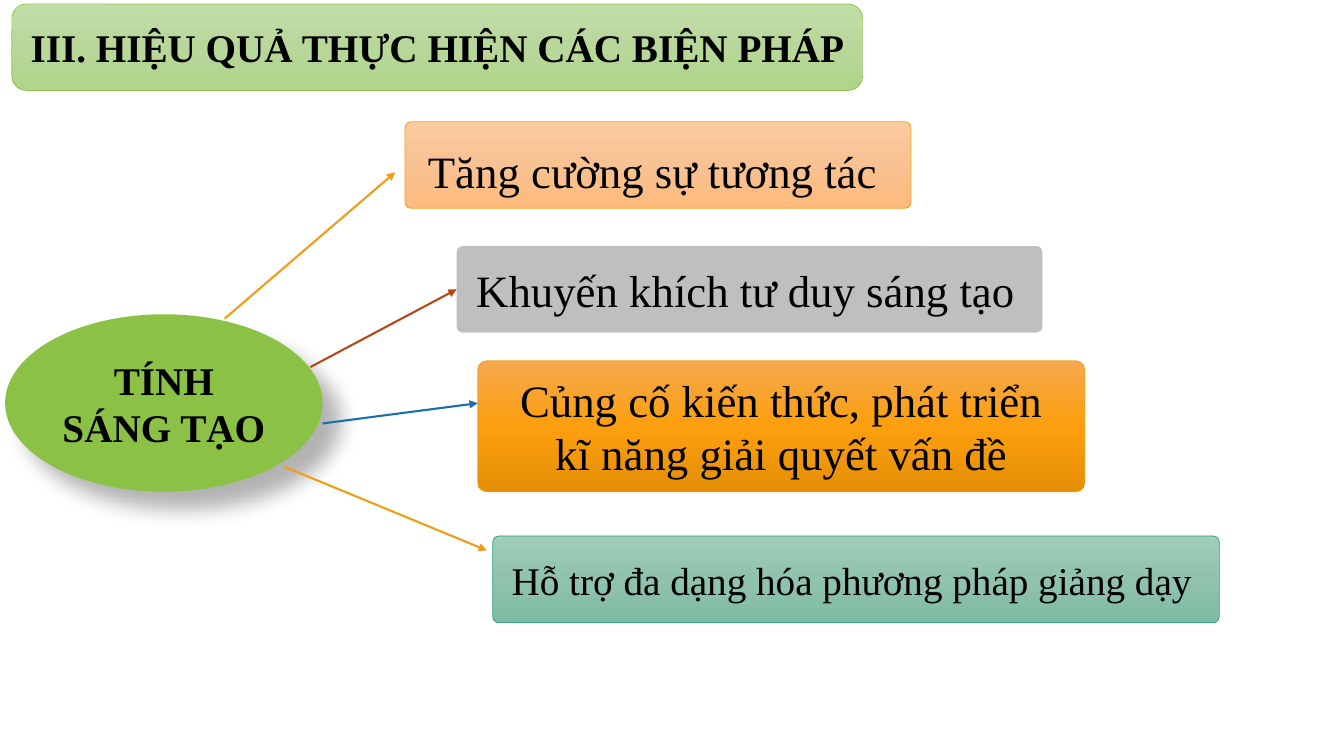
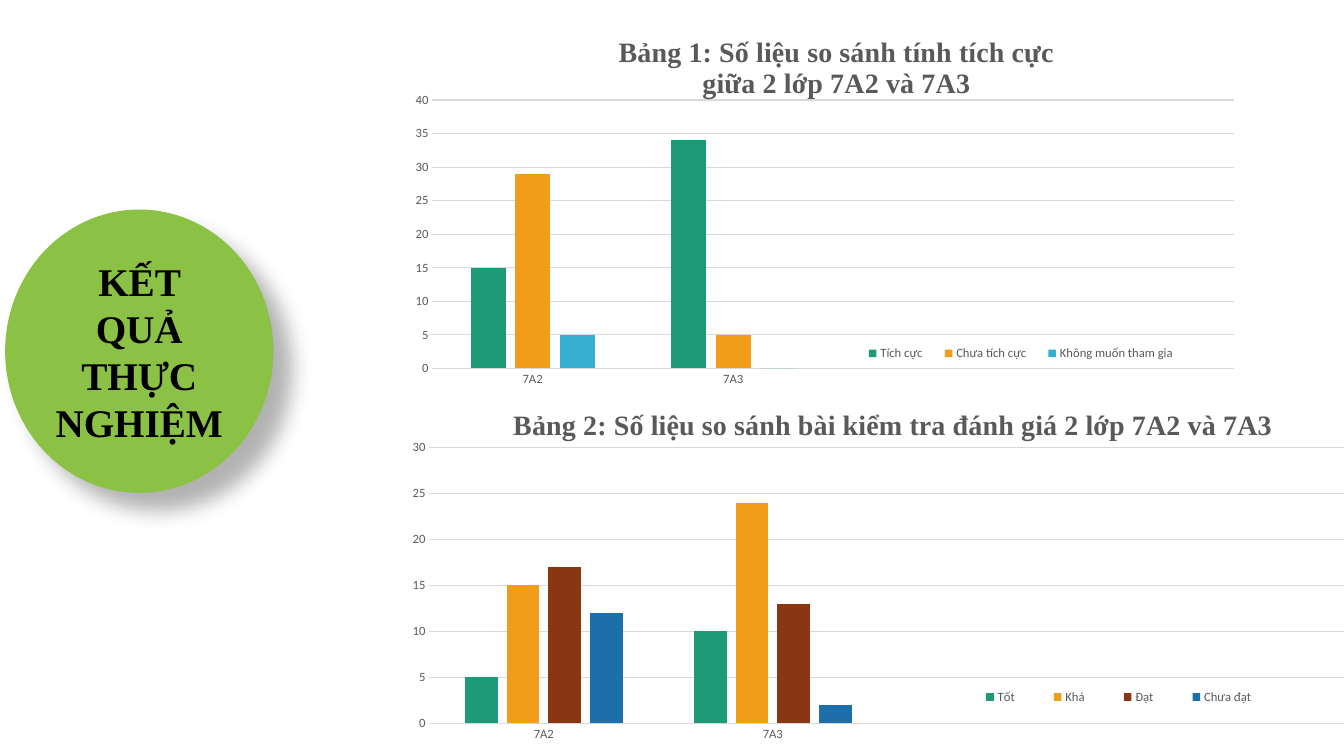
from copy import deepcopy

from pptx import Presentation
from pptx.chart.data import CategoryChartData
from pptx.dml.color import RGBColor
from pptx.enum.chart import XL_CHART_TYPE, XL_LEGEND_POSITION, XL_TICK_MARK
from pptx.enum.shapes import MSO_CONNECTOR, MSO_SHAPE
from pptx.enum.text import MSO_ANCHOR, PP_ALIGN
from pptx.oxml import parse_xml
from pptx.oxml.ns import nsdecls, qn
from pptx.util import Cm, Pt

HEADING_FONT = "Times New Roman"
CHART_FONT = "Calibri"

BLACK = RGBColor(0x00, 0x00, 0x00)
GRAY = RGBColor(0x59, 0x59, 0x59)
SILVER = RGBColor(0xBF, 0xBF, 0xBF)
GRID = RGBColor(0xD9, 0xD9, 0xD9)
GREEN = RGBColor(0x8B, 0xC1, 0x45)
TEAL = RGBColor(0x1D, 0x9A, 0x78)
ORANGE = RGBColor(0xF1, 0x9D, 0x19)
RUST = RGBColor(0xB7, 0x49, 0x19)
BROWN = RGBColor(0x89, 0x37, 0x13)
BLUE = RGBColor(0x1D, 0x6F, 0xA9)
SKY = RGBColor(0x36, 0xAF, 0xCE)


def shades(*codes):
    return [RGBColor.from_string(code) for code in codes]


GREEN_SHADES = shades("C2DEA8", "B8D79B", "AED588")
PEACH_SHADES = shades("FACBA0", "F8C292", "FCBA7D")
ORANGE_SHADES = shades("F5A84E", "FC9F0E", "E58F07")
TEAL_SHADES = shades("9ECDBA", "91C2AE", "7DBCA3")

# Boxes are left, top, width, height; insets are left, top, right, bottom; all in cm.
HEADER = ("III. HIỆU QUẢ THỰC HIỆN CÁC BIỆN PHÁP", (0.3, 0.1, 21.44, 2.18))
CREATIVITY = ("TÍNH SÁNG TẠO", (0.13, 7.92, 8, 4.47))
RESULTS = ("KẾT QUẢ THỰC NGHIỆM", (0.13, 5.28, 6.76, 7.14))

BENEFITS = [
    dict(text="Tăng cường sự tương tác", box=(10.21, 3.07, 12.75, 2.18),
         fill=PEACH_SHADES, line=ORANGE, insets=(0, 0.3, 0.28, 0),
         arrow=(ORANGE, (5.66, 8.03), (9.96, 4.34))),
    dict(text="Khuyến khích tư duy sáng tạo", box=(11.51, 6.2, 14.76, 2.18),
         fill=SILVER, insets=(0, 0, 0.2, 0),
         arrow=(RUST, (7.82, 9.25), None)),
    dict(text="Củng cố kiến thức, phát triển kĩ năng giải quyết vấn đề",
         box=(12.04, 9.09, 15.3, 3.3),
         fill=ORANGE_SHADES, line=ORANGE, insets=(0.94, 0, 0.94, 0),
         arrow=(BLUE, (8.13, 10.67), (12.04, 10.16))),
    dict(text="Hỗ trợ đa dạng hóa phương pháp giảng dạy",
         box=(12.42, 13.51, 18.31, 2.18),
         fill=TEAL_SHADES, line=TEAL, insets=(0.43, 0, 0, 0),
         size=28, align=PP_ALIGN.LEFT,
         arrow=(ORANGE, (7.16, 11.76), (12.27, 13.87))),
]

CLASSES = ["7A2", "7A3", "", ""]
# Layouts are fractions of the chart: x, y and, where sized, width, height.
CHARTS = [
    dict(title=["Bảng 1: Số liệu so sánh tính tích cực", "giữa 2 lớp 7A2 và 7A3"],
         box=(9.58, 0.71, 21.97, 9.53), top_value=40,
         series=[("Tích cực", (15, 34), TEAL),
                 ("Chưa tích cực", (29, 5), ORANGE),
                 ("Không muốn tham gia", (5, 0), SKY)],
         title_at=(0.27, 0.01), plot_at=(0.06, 0.19, 0.92, 0.71),
         legend_at=(0.54, 0.82, 0.39, 0.08)),
    dict(title=["Bảng 2: Số liệu so sánh bài kiểm tra đánh giá 2 lớp 7A2 và 7A3"],
         box=(9.58, 9.75, 24.82, 9.53), top_value=30,
         series=[("Tốt", (5, 10), TEAL),
                 ("Khá", (15, 24), ORANGE),
                 ("Đạt", (17, 13), BROWN),
                 ("Chưa đạt", (12, 2), BLUE)],
         title_at=(0.13, 0.04), plot_at=(0.05, 0.16, 0.93, 0.73),
         legend_at=(0.58, 0.78, 0.34, 0.08)),
]


def lengths(values):
    return [Cm(value) for value in values]


def style_font(font, name, size, color, bold=False):
    font.name, font.size, font.bold = name, Pt(size), bold
    font.color.rgb = color


def write(frame, text, size=28, bold=False, align=PP_ALIGN.CENTER,
          insets=(0.25, 0.13, 0.25, 0.13)):
    frame.word_wrap = True
    frame.vertical_anchor = MSO_ANCHOR.MIDDLE
    (frame.margin_left, frame.margin_top,
     frame.margin_right, frame.margin_bottom) = lengths(insets)
    paragraph = frame.paragraphs[0]
    paragraph.alignment = align
    run = paragraph.add_run()
    run.text = text
    style_font(run.font, HEADING_FONT, size, BLACK, bold)


def paint(shape, fill, line=None):
    """Fill with one colour, or with a list of three as a downward gradient."""
    shape.shadow.inherit = False
    if isinstance(fill, list):
        shape.fill.gradient()
        shape.fill.gradient_angle = 270
        stop_list = shape._element.spPr.find(".//" + qn("a:gsLst"))
        stop_list.append(deepcopy(stop_list[0]))
        for index, (stop, color) in enumerate(zip(shape.fill.gradient_stops, fill)):
            stop.color.rgb = color
            stop.position = index / 2
    else:
        shape.fill.solid()
        shape.fill.fore_color.rgb = fill
    if line is None:
        shape.line.fill.background()
    else:
        shape.line.color.rgb = line
        shape.line.width = Pt(0.5)


def add_panel(slide, text, box, fill, line=None, corner=0.07, **text_format):
    panel = slide.shapes.add_shape(MSO_SHAPE.ROUNDED_RECTANGLE, *lengths(box))
    panel.adjustments[0] = corner
    paint(panel, fill, line)
    write(panel.text_frame, text, **text_format)
    return panel


def add_topic(slide, text, box):
    """Add the green ellipse with its soft shadow to the lower right."""
    topic = slide.shapes.add_shape(MSO_SHAPE.OVAL, *lengths(box))
    paint(topic, GREEN)
    effects = topic._element.spPr.find(qn("a:effectLst"))
    effects.append(parse_xml(
        f'<a:outerShdw {nsdecls("a")} blurRad="{Pt(15)}" dist="{Pt(18)}" '
        'dir="2700000" algn="tl" rotWithShape="0"><a:srgbClr val="000000">'
        '<a:alpha val="30000"/></a:srgbClr></a:outerShdw>'))
    write(topic.text_frame, text, bold=True)


def add_arrow(slide, panel, color, start, end):
    """Draw an arrow to end, or to the middle of the panel's left side."""
    arrow = slide.shapes.add_connector(
        MSO_CONNECTOR.STRAIGHT, *lengths(start), *lengths(end or start))
    if end is None:
        arrow.end_connect(panel, 1)
    arrow.line.color.rgb = color
    arrow.line.width = Pt(1.5)
    arrow.line._get_or_add_ln().append(
        parse_xml(f'<a:tailEnd {nsdecls("a")} type="triangle"/>'))
    arrow._element.spPr.append(parse_xml(f'<a:effectLst {nsdecls("a")}/>'))


def place(part, index, fractions, inner=False):
    """Give a chart part a manual layout, as its child number index."""
    for old_layout in part.findall(qn("c:layout")):
        part.remove(old_layout)
    keys = "xywh"[:len(fractions)]
    target = '<c:layoutTarget val="inner"/>' if inner else ""
    modes = "".join(f'<c:{key}Mode val="edge"/>' for key in keys if key in "xy")
    values = "".join(f'<c:{key} val="{value}"/>' for key, value in zip(keys, fractions))
    part.insert(index, parse_xml(
        f'<c:layout {nsdecls("c")}><c:manualLayout>{target}{modes}{values}'
        '</c:manualLayout></c:layout>'))


def add_column_chart(slide, title, box, top_value, series, title_at, plot_at, legend_at):
    table = CategoryChartData()
    table.categories = CLASSES
    for name, values, _ in series:
        gaps = [None] * (len(CLASSES) - len(values))
        table.add_series(name, [*values, *gaps])
    chart = slide.shapes.add_chart(
        XL_CHART_TYPE.COLUMN_CLUSTERED, *lengths(box), table).chart
    style_font(chart.font, CHART_FONT, 10, BLACK)

    chart.has_title = True
    heading = chart.chart_title.text_frame
    for index, line in enumerate(title):
        paragraph = heading.add_paragraph() if index else heading.paragraphs[0]
        paragraph.alignment = PP_ALIGN.CENTER
        run = paragraph.add_run()
        run.text = line
        style_font(run.font, HEADING_FONT, 20, GRAY, bold=True)
    chart.chart_title.include_in_layout = False
    place(chart.chart_title._element, 1, title_at)

    plot = chart.plots[0]
    plot.vary_by_categories = False
    plot.gap_width, plot.overlap = 219, -27
    for columns, (_, _, color) in zip(plot.series, series):
        columns.format.fill.solid()
        columns.format.fill.fore_color.rgb = color
    place(chart._chartSpace.chart.plotArea, 0, plot_at, inner=True)

    for axis in (chart.category_axis, chart.value_axis):
        axis.major_tick_mark = axis.minor_tick_mark = XL_TICK_MARK.NONE
        style_font(axis.tick_labels.font, CHART_FONT, 9, GRAY)
    chart.value_axis.minimum_scale = 0
    chart.value_axis.maximum_scale = top_value
    chart.value_axis.major_unit = 5
    chart.value_axis.format.line.fill.background()
    for line in (chart.category_axis.format.line,
                 chart.value_axis.major_gridlines.format.line):
        line.color.rgb = GRID
        line.width = Pt(0.75)

    chart.has_legend = True
    chart.legend.position = XL_LEGEND_POSITION.BOTTOM
    chart.legend.include_in_layout = False
    style_font(chart.legend.font, CHART_FONT, 9, GRAY)
    place(chart.legend._element, 1, legend_at)


def build_benefits(slide):
    add_panel(slide, *HEADER, GREEN_SHADES, GREEN, corner=0.17, bold=True)
    add_topic(slide, *CREATIVITY)
    for benefit in BENEFITS:
        panel_format = {"size": 32, **benefit}
        arrow = panel_format.pop("arrow")
        panel = add_panel(slide, **panel_format)
        add_arrow(slide, panel, *arrow)


def build_results(slide):
    for chart in CHARTS:
        add_column_chart(slide, **chart)
    add_topic(slide, *RESULTS)


def main():
    deck = Presentation()
    deck.slide_width, deck.slide_height = Cm(33.87), Cm(19.05)
    for build in (build_benefits, build_results):
        build(deck.slides.add_slide(deck.slide_layouts[6]))
    deck.save("out.pptx")


if __name__ == "__main__":
    main()
